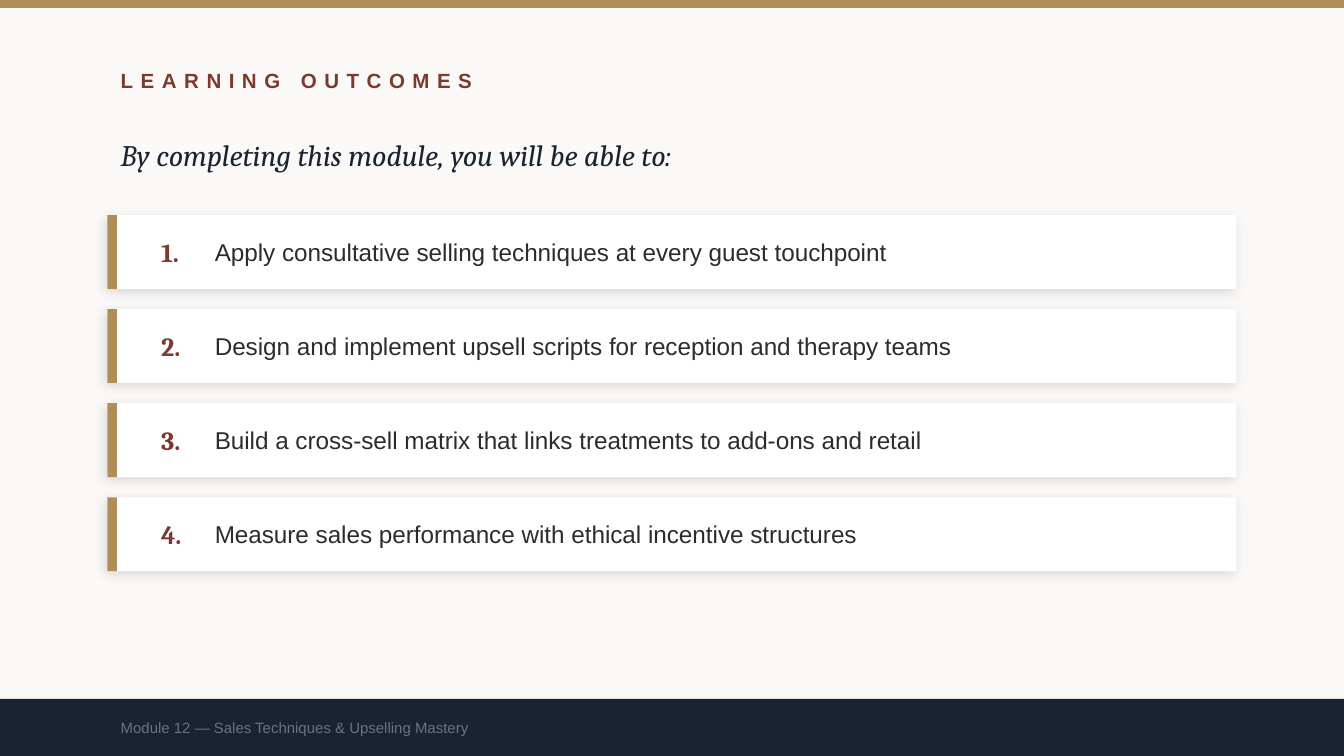
import pptx
import pptx.dml.color
import pptx.enum.shapes
import pptx.enum.text
import pptx.oxml
import pptx.oxml.ns
import pptx.util

PX = 4572  # EMU per px, 200 px to the inch
WIDTH, HEIGHT = 2000, 1125
GOLD, RUST, NAVY = "B08D57", "7C3A2E", "1A2332"
rgb = pptx.dml.color.RGBColor.from_string

HEADING = {"name": "Arial", "size": pptx.util.Pt(11), "bold": True}
INTRO = {"name": "Cambria", "size": pptx.util.Pt(16), "italic": True}
NUMBER = {"name": "Cambria", "size": pptx.util.Pt(14), "bold": True}
OUTCOME = {"name": "Arial", "size": pptx.util.Pt(13)}
FOOTER = {"name": "Arial", "size": pptx.util.Pt(8)}

deck = pptx.Presentation()
deck.slide_width, deck.slide_height = WIDTH * PX, HEIGHT * PX
slide = deck.slides.add_slide(deck.slide_layouts[6])
slide.background.fill.solid()
slide.background.fill.fore_color.rgb = rgb("FAF9F7")


def add_block(left, top, width, height, colour):
    block = slide.shapes.add_shape(
        pptx.enum.shapes.MSO_SHAPE.RECTANGLE,
        left * PX, top * PX, width * PX, height * PX)
    block.shadow.inherit = False
    block.fill.solid()
    block.fill.fore_color.rgb = rgb(colour)
    block.line.fill.background()
    return block


def add_text(left, top, width, height, text, colour, formats):
    frame = slide.shapes.add_textbox(
        left * PX, top * PX, width * PX, height * PX).text_frame
    frame.word_wrap = True
    frame.vertical_anchor = pptx.enum.text.MSO_ANCHOR.MIDDLE
    run = frame.paragraphs[0].add_run()
    run.text = text
    run.font.color.rgb = rgb(colour)
    for key, value in formats.items():
        setattr(run.font, key, value)
    return run


# Top band, heading and introduction
add_block(0, 0, WIDTH, 12, GOLD)
heading = add_text(160, 80, 1600, 80, "LEARNING OUTCOMES", RUST, HEADING)
heading.font._element.set("spc", "400")
add_text(160, 180, 1600, 100, "By completing this module, you will be able to:",
         NAVY, INTRO)

# Outcome cards
outcomes = [
    "Apply consultative selling techniques at every guest touchpoint",
    "Design and implement upsell scripts for reception and therapy teams",
    "Build a cross-sell matrix that links treatments to add-ons and retail",
    "Measure sales performance with ethical incentive structures",
]
card_height, card_gap = 110, 30
soft_shadow = (
    f'<a:outerShdw {pptx.oxml.ns.nsdecls("a")} blurRad="{pptx.util.Pt(6)}" '
    f'dist="{pptx.util.Pt(2)}" dir="{135 * 60000}" algn="bl" rotWithShape="0">'
    '<a:srgbClr val="000000"><a:alpha val="12000"/></a:srgbClr></a:outerShdw>')

for index, outcome in enumerate(outcomes):
    top = 320 + index * (card_height + card_gap)
    card = add_block(160, top, 1680, card_height, "FFFFFF")
    effects = card._element.spPr.find(pptx.oxml.ns.qn("a:effectLst"))
    effects.append(pptx.oxml.parse_xml(soft_shadow))
    add_block(160, top, 14, card_height, GOLD)
    add_text(220, top, 80, card_height, f"{index + 1}.", RUST, NUMBER)
    add_text(300, top, 1480, card_height, outcome, "2C2C2C", OUTCOME)

# Footer
add_block(0, 1040, WIDTH, 85, NAVY)
add_text(160, 1040, 1600, 85, "Module 12 — Sales Techniques & Upselling Mastery",
         "6B7280", FOOTER)

deck.save("out.pptx")
